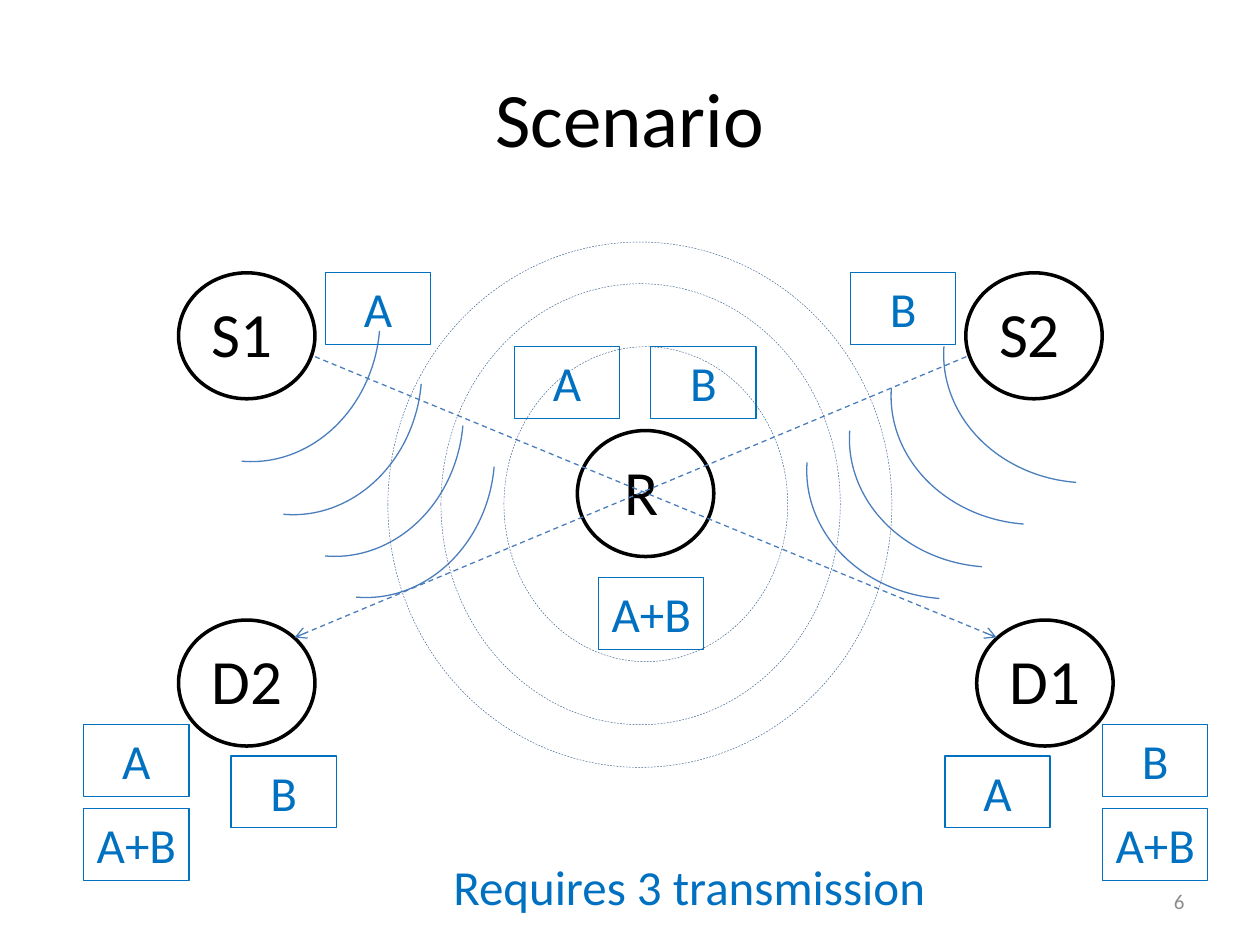
from lxml import etree
from pptx import Presentation
from pptx.dml.color import RGBColor
from pptx.enum import dml, shapes, text
from pptx.oxml.ns import qn
from pptx.util import Cm, Pt

BLACK = RGBColor(0x00, 0x00, 0x00)
BLUE = RGBColor(0x00, 0x70, 0xC0)
WAVE = RGBColor(0x4B, 0x7E, 0xBC)
RING = RGBColor(0x3A, 0x5F, 0x8C)
GREY = RGBColor(0x8C, 0x8C, 0x8C)

LEFT, CENTER, RIGHT = text.PP_ALIGN.LEFT, text.PP_ALIGN.CENTER, text.PP_ALIGN.RIGHT
TOP, MIDDLE = text.MSO_ANCHOR.TOP, text.MSO_ANCHOR.MIDDLE

prs = Presentation()
prs.slide_width, prs.slide_height = Cm(25.4), Cm(19.05)
s = prs.slides.add_slide(prs.slide_layouts[6])


def write(sp, words, size, color, align=LEFT, anchor=TOP, wrap=True):
    tf = sp.text_frame
    for name, value in {"word_wrap": wrap, "vertical_anchor": anchor}.items():
        setattr(tf, name, value)
    p = tf.paragraphs[0]
    p.alignment = align
    r = p.add_run()
    r.text = words
    for name, value in {"name": "Calibri", "size": Pt(size)}.items():
        setattr(r.font, name, value)
    r.font.color.rgb = color


def outline(kind, box, color, width, dash=None, rotation=0):
    sp = s.shapes.add_shape(kind, *map(Cm, box))
    sp.shadow.inherit = False
    sp.fill.background()
    sp.line.color.rgb = color
    for name, value in {"width": Pt(width), "dash_style": dash}.items():
        setattr(sp.line, name, value)
    sp.rotation = rotation
    return sp


sp = s.shapes.add_textbox(Cm(1.27), Cm(0.76), Cm(22.86), Cm(3.18))
write(sp, "Scenario", 44, BLACK, CENTER, MIDDLE)

nodes = [
    ("S1", 3.6, 5.5, 0.42, 1.75),
    ("D1", 19.69, 12.5, 0.42, 1.96),
    ("S2", 19.47, 5.5, 0.42, 1.75),
    ("D2", 3.6, 12.5, 0.42, 1.96),
    ("R", 11.64, 8.68, 0.71, 1.22),
]
for name, x, y, inset, width in nodes:
    outline(shapes.MSO_SHAPE.OVAL, (x, y, 2.75, 2.54), BLACK, 2)
    sp = s.shapes.add_textbox(Cm(x + inset), Cm(y + 0.31), Cm(width), Cm(1.8))
    write(sp, name, 36, BLACK, wrap=False)

for ends in [(6.35, 7.19, 20.09, 12.85), (19.48, 7.19, 5.94, 12.85)]:
    sp = s.shapes.add_connector(shapes.MSO_CONNECTOR.STRAIGHT, *map(Cm, ends))
    sp.line.color.rgb = WAVE
    sp.line.width = Pt(0.75)
    sp.line.dash_style = dml.MSO_LINE.DASH
    etree.SubElement(sp.line._get_or_add_ln(), qn("a:tailEnd"), type="arrow")
    etree.SubElement(sp._element.spPr, qn("a:effectLst"))

waves = {
    95: [(2.26, 3.91), (3.94, 5.82), (3.1, 4.98), (4.57, 6.65)],
    184.2: [(19.02, 4.65), (17.12, 6.35), (16.26, 6.99), (17.96, 5.49)],
}
for rotation, corners in waves.items():
    for x, y in corners:
        outline(shapes.MSO_SHAPE.ARC, (x, y, 5.72, 5.08), WAVE, 0.75, rotation=rotation)

packets = {
    "A": [(6.56, 5.5), (1.69, 14.61), (10.37, 6.99), (19.05, 15.24)],
    "B": [(17.15, 5.5), (13.12, 6.99), (22.23, 14.61), (4.66, 15.24)],
    "A+B": [(12.07, 11.64), (1.69, 16.3), (22.23, 16.3)],
}
for words, corners in packets.items():
    for x, y in corners:
        sp = outline(shapes.MSO_SHAPE.RECTANGLE, (x, y, 2.12, 1.45), BLUE, 0.75)
        write(sp, words, 28, BLUE, CENTER)

sp = s.shapes.add_textbox(Cm(8.89), Cm(17.15), Cm(10.13), Cm(1.45))
write(sp, "Requires 3 transmission", 28, BLUE, wrap=False)

rings = [(10.16, 6.99, 5.72, 6.35), (8.89, 5.72, 8.05, 8.89), (7.82, 4.88, 10.16, 10.59)]
for box in rings:
    outline(shapes.MSO_SHAPE.OVAL, box, RING, 0.25, dml.MSO_LINE.DASH)

sp = s.shapes.add_textbox(Cm(18.2), Cm(17.66), Cm(5.93), Cm(1.01))
write(sp, "6", 12, GREY, RIGHT, MIDDLE)

prs.save("out.pptx")
